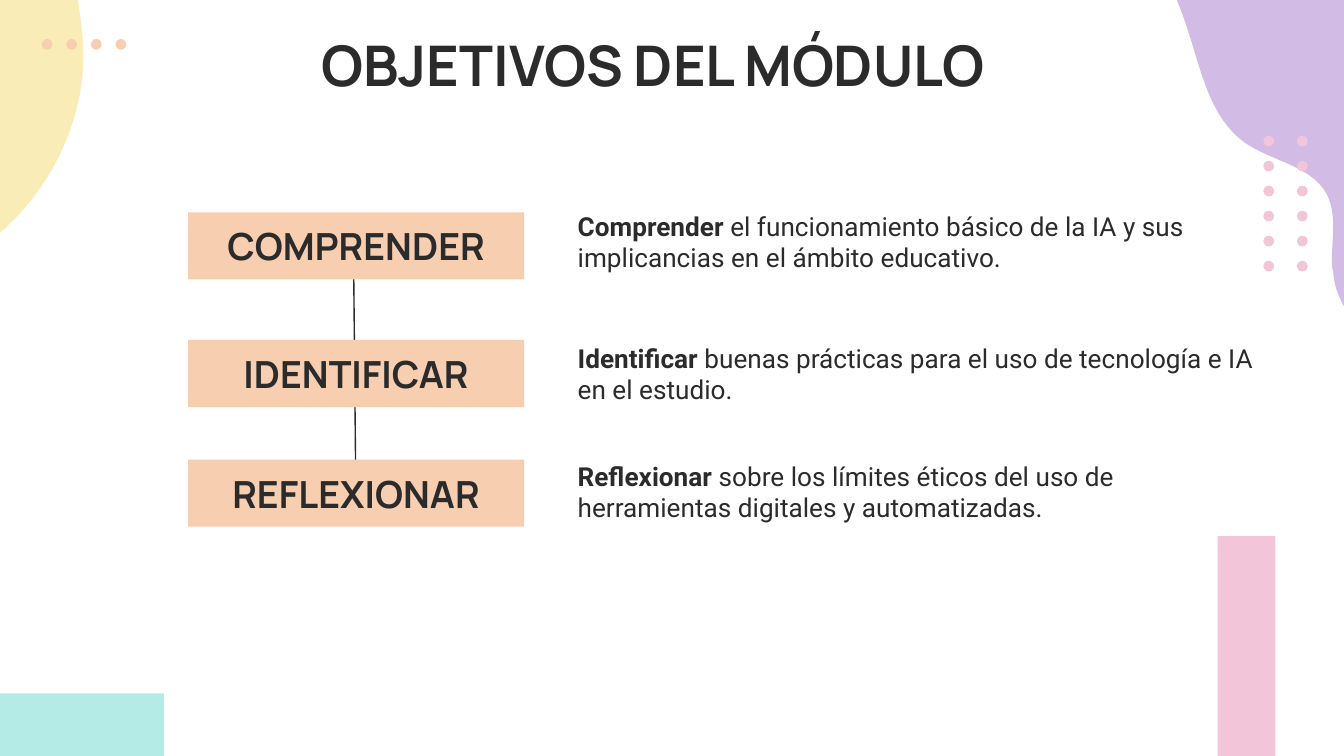
from pptx import Presentation
from pptx.dml.color import RGBColor
from pptx.enum.shapes import MSO_CONNECTOR as Link, MSO_SHAPE as Form
from pptx.enum.text import MSO_ANCHOR as Anchor, PP_ALIGN as Align
from pptx.oxml.ns import qn
from pptx.util import Inches, Pt
from lxml.etree import SubElement

TITLE = "OBJETIVOS DEL MÓDULO"
# label, box top, text top, text width, lead word, rest
GOALS = [
    ("COMPRENDER", 1.58, 1.55, 5.36, "Comprender ",
     "el funcionamiento básico de la IA y sus implicancias en el ámbito educativo."),
    ("IDENTIFICAR", 2.53, 2.53, 5.36, "Identificar ",
     "buenas prácticas para el uso de tecnología e IA en el estudio."),
    ("REFLEXIONAR", 3.42, 3.41, 5.03, "Reflexionar ",
     "sobre los límites éticos del uso de herramientas digitales y automatizadas."),
]
# Each step is a point (2 numbers) or a Bezier curve (6 numbers)
YELLOW = [
    (0.83, -1.82), (-0.84, -1.82), (-0.84, 1.75), (-0.02, 1.75),
    (0.37, 1.42, 0.62, 0.92, 0.62, 0.42), (0.62, 0.02, 0.48, -0.36, 0.47, -0.76),
    (0.47, -0.77, 0.47, -0.78, 0.47, -0.79), (0.47, -1.16, 0.61, -1.53, 0.83, -1.82),
]
PURPLE = [
    (8.38, -0.66), (10.75, -0.66), (10.75, 2.45), (10.14, 2.45),
    (10.02, 2.34, 9.93, 2.19, 9.92, 2.02), (9.91, 1.99, 9.91, 1.96, 9.91, 1.94),
    (9.91, 1.86, 9.92, 1.77, 9.92, 1.69), (9.92, 1.6, 9.91, 1.52, 9.87, 1.44),
    (9.75, 1.23, 9.46, 1.2, 9.26, 1.06), (9, 0.87, 8.94, 0.53, 8.84, 0.23),
    (8.74, -0.09, 8.58, -0.39, 8.38, -0.66),
]
# color, first left, last left, columns, first top, last top, rows
DOTS = [("pink", 9.4, 9.65, 2, 1.01, 1.94, 6),
        ("peach", 0.31, 0.86, 4, 0.29, 0.29, 1)]
BARS = [("teal", -0.01, 5.16, 1.23, 0.47), ("pink", 9.06, 3.99, 0.43, 1.64)]

THEME = {
    "ink": "2B2B2B", "paper": "FFFFFF", "yellow": "FAECB6", "purple": "D2BCE6",
    "pink": "F3C5D8", "peach": "F7CFB0", "teal": "B5EBE7",
    "head": "Manrope", "body": "Roboto",
    "title": 30, "label": 20, "text": 14,
}


def tone(name):
    return RGBColor.from_string(THEME[name])


def paint(shape, color):
    shape.shadow.inherit = False
    shape.fill.solid()
    shape.fill.fore_color.rgb = tone(color)
    shape.line.fill.background()
    return shape


def block(slide, color, *box, form=Form.RECTANGLE):
    return paint(slide.shapes.add_shape(form, *map(Inches, box)), color)


def blob(slide, color, steps, parts=16):
    """Draw a closed outline, with each curve sampled into short sides."""
    pts = [steps[0]]
    for step in steps[1:]:
        if len(step) == 2:
            pts.append(step)
            continue
        a, b, c, d = pts[-1], step[:2], step[2:4], step[4:]
        for i in range(1, parts + 1):
            t = i / parts
            u = 1 - t
            pts.append(tuple(
                u**3 * a[k] + 3 * u * u * t * b[k] + 3 * u * t * t * c[k] + t**3 * d[k]
                for k in (0, 1)))
    first, *rest = [(Inches(x), Inches(y)) for x, y in pts]
    pen = slide.shapes.build_freeform(*first)
    pen.add_line_segments(rest, close=True)
    paint(pen.convert_to_shape(), color)


def spread(first, last, count):
    """Return evenly spaced places from first to last."""
    step = (last - first) / max(count - 1, 1)
    return [first + i * step for i in range(count)]


def write(shape, *runs, size="text", font="body", align=Align.LEFT, anchor=Anchor.MIDDLE):
    """Fill a shape with one paragraph of (text, bold) runs."""
    frame = shape.text_frame
    frame.word_wrap = True
    frame.vertical_anchor = anchor
    frame.margin_left = frame.margin_right = Inches(0.1)
    frame.margin_top = frame.margin_bottom = Inches(0.1)
    para = frame.paragraphs[0]
    para.alignment = align
    for text, bold in runs:
        run = para.add_run()
        run.text = text
        run.font.bold = bold
        run.font.name = THEME[font]
        run.font.size = Pt(THEME[size])
        run.font.color.rgb = tone("ink")


def decor(slide):
    blob(slide, "yellow", YELLOW)
    blob(slide, "purple", PURPLE)
    for color, left, right, cols, top, base, rows in DOTS:
        for x in spread(left, right, cols):
            for y in spread(top, base, rows):
                block(slide, color, x, y, 0.08, 0.08, form=Form.OVAL)
    for bar in BARS:
        block(slide, *bar)


def goals(slide):
    line = slide.shapes.add_connector(
        Link.STRAIGHT, *map(Inches, (2.63, 1.83, 2.65, 3.91)))
    line.line.color.rgb = tone("ink")
    line.line.width = Pt(0.75)
    SubElement(line._element.spPr, qn("a:effectLst"))
    for label, top, y, width, lead, rest in GOALS:
        write(block(slide, "peach", 1.4, top, 2.5, 0.5), (label, True),
              size="label", font="head", align=Align.CENTER)
        note = slide.shapes.add_textbox(*map(Inches, (4.2, y, width, 0.5)))
        write(note, (lead, True), (rest, False))


def main():
    deck = Presentation()
    deck.slide_width = Inches(10)
    deck.slide_height = Inches(10 * 9 / 16)
    slide = deck.slides.add_slide(deck.slide_layouts[5])
    slide.background.fill.solid()
    slide.background.fill.fore_color.rgb = tone("paper")
    decor(slide)
    title = slide.shapes.title
    title.left, title.top, title.width, title.height = map(Inches, (2.13, 0.13, 5.46, 0.63))
    write(title, (TITLE, True), size="title", font="head",
          align=Align.CENTER, anchor=Anchor.TOP)
    goals(slide)
    deck.save("out.pptx")


if __name__ == "__main__":
    main()
